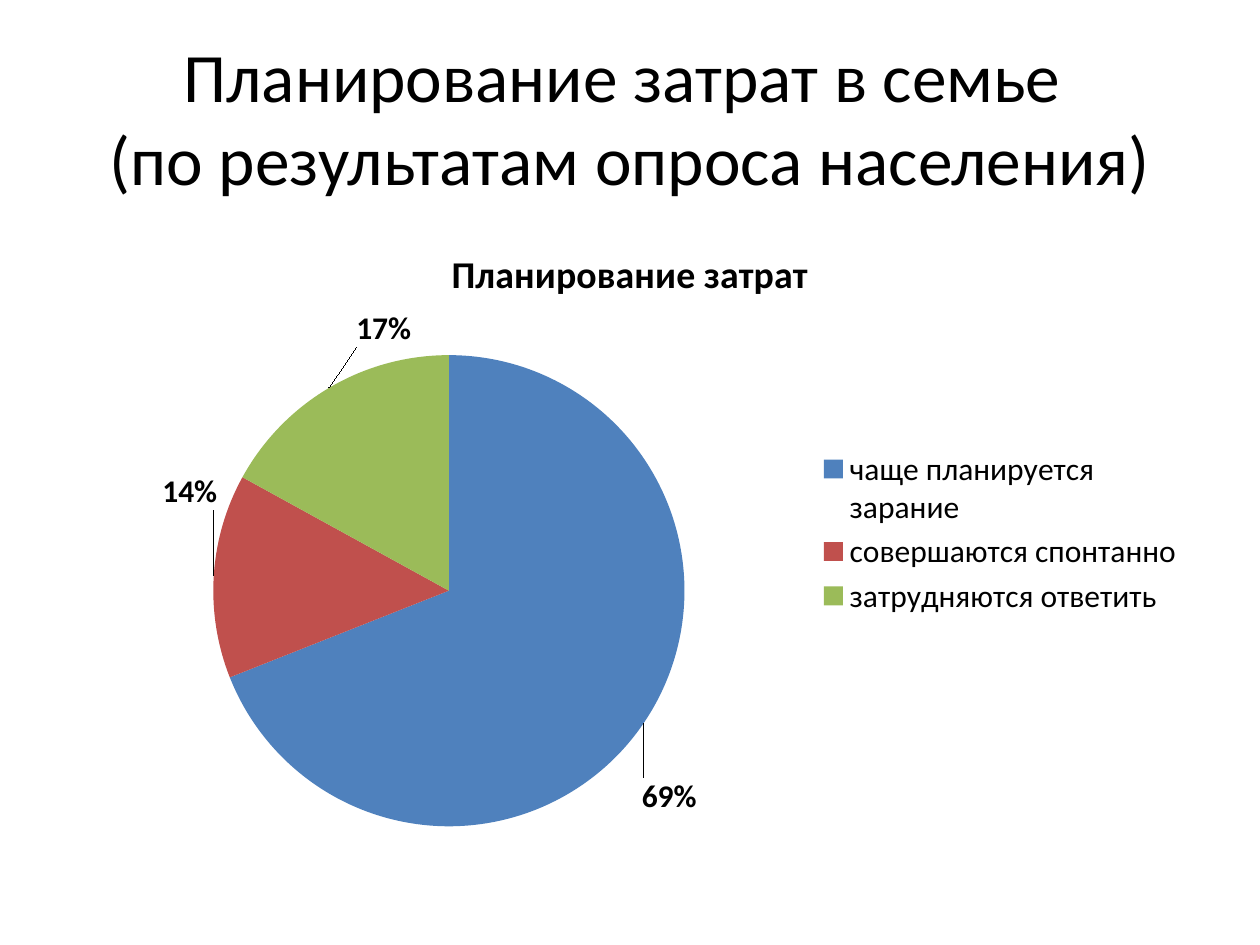
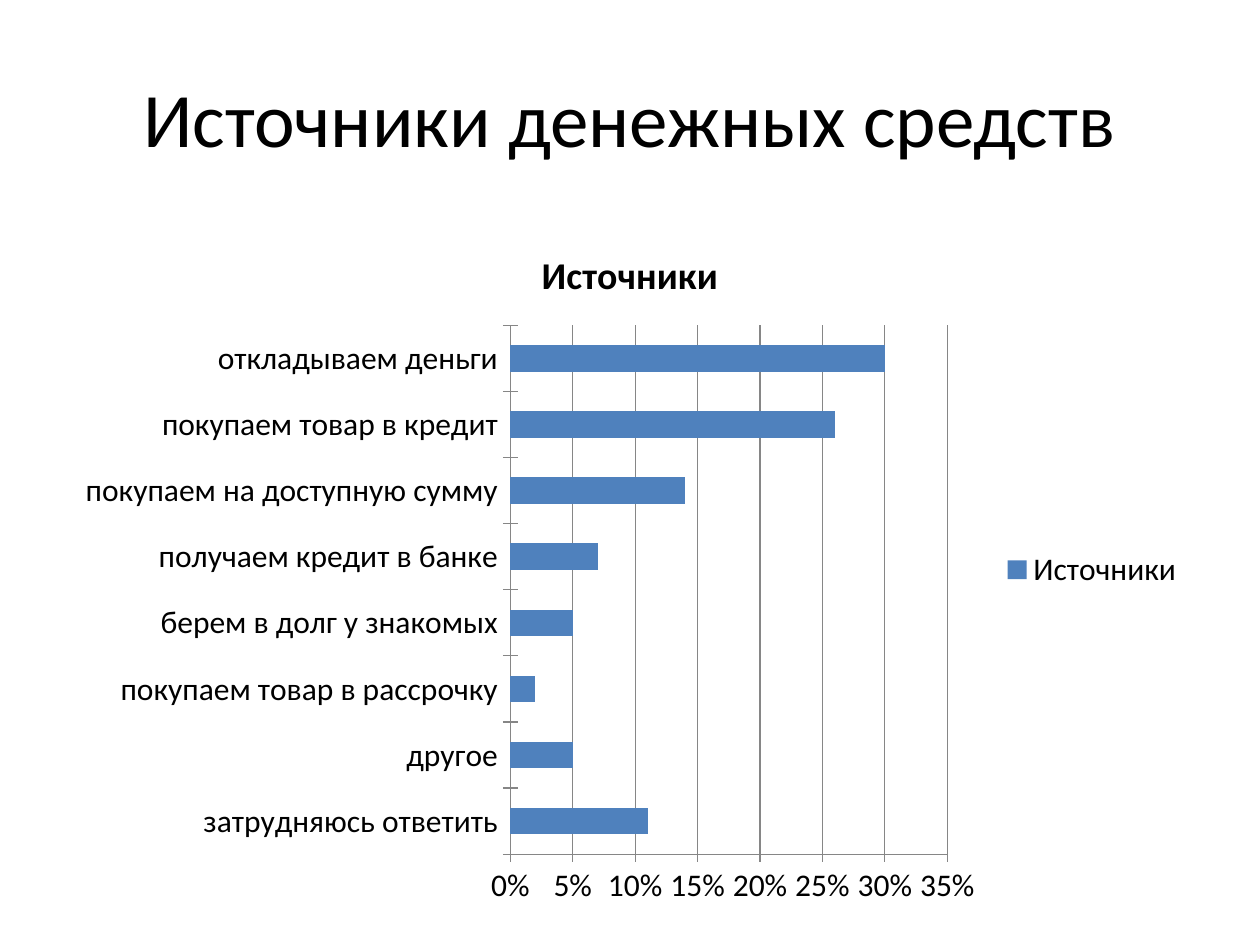
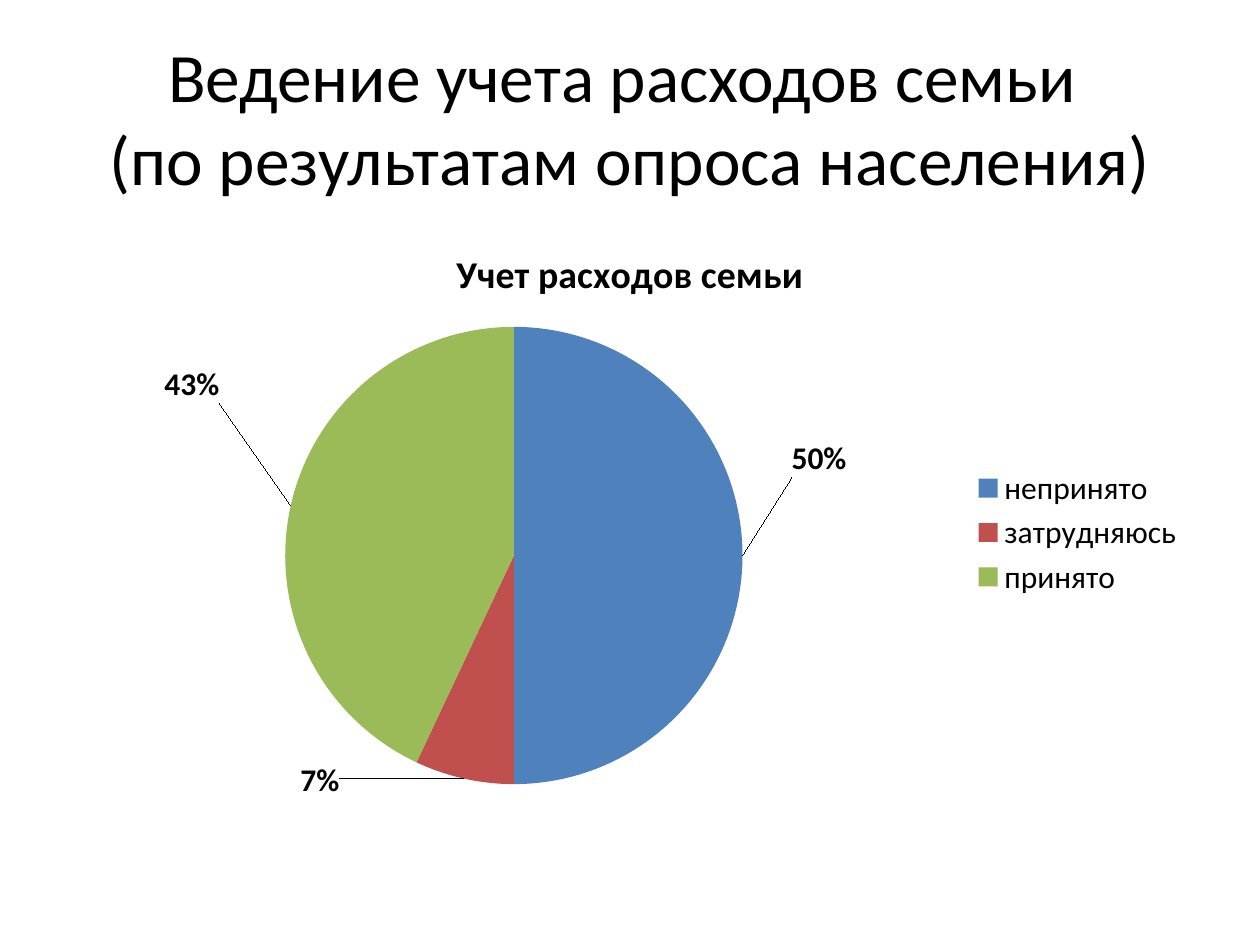
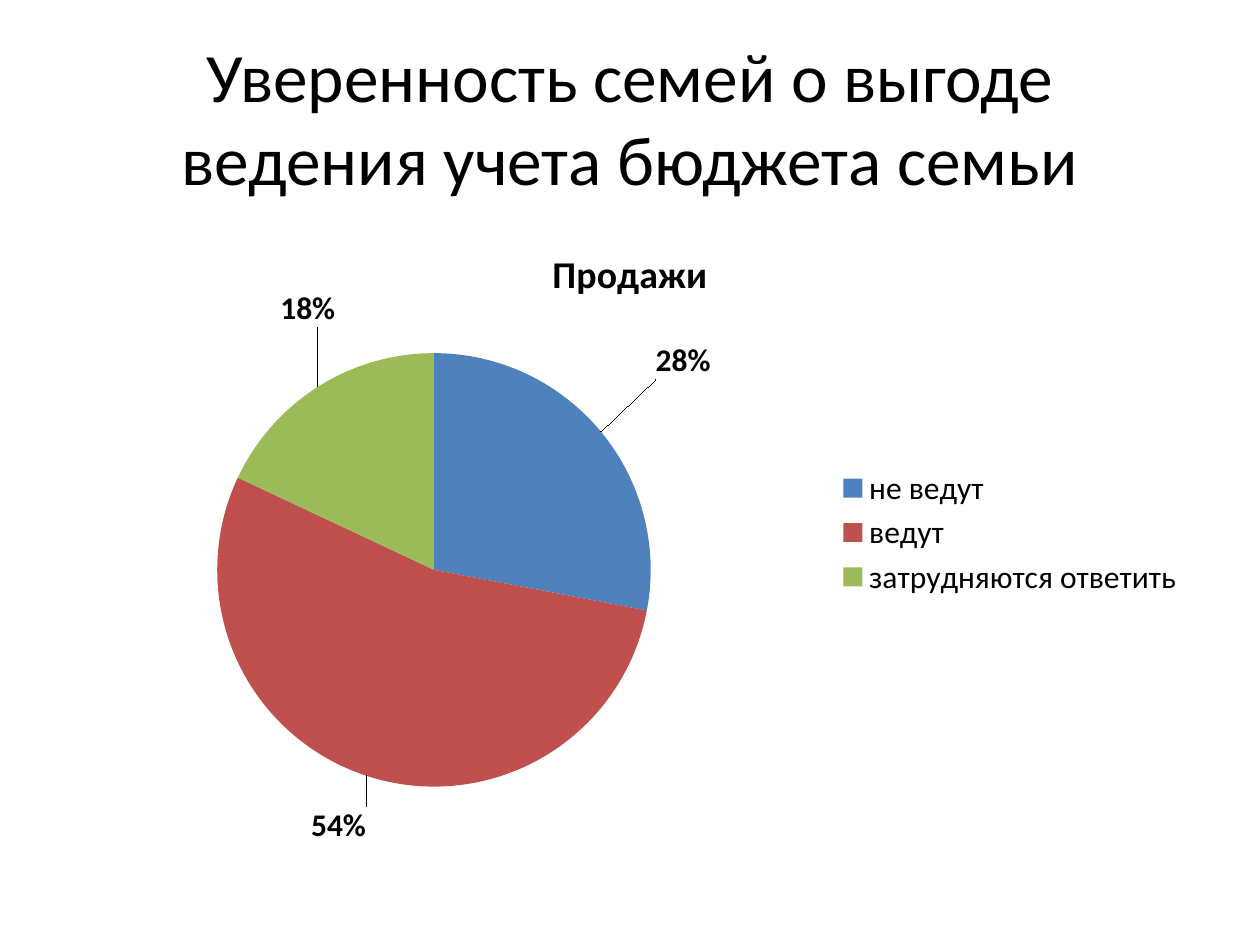
import math
from dataclasses import dataclass

import pptx
import pptx.chart.data
import pptx.dml.color
import pptx.enum.chart
import pptx.enum.text
import pptx.oxml
import pptx.oxml.ns
import pptx.util

Cm = pptx.util.Cm
RGB = pptx.dml.color.RGBColor.from_string
CHART_TYPE = pptx.enum.chart.XL_CHART_TYPE


@dataclass(frozen=True)
class Theme:
    font: str = "Calibri"
    ink: str = "000000"
    grid: str = "868686"
    slices: tuple = ("4F81BD", "C0504D", "9BBB59")
    title_size: float = 39.6
    short_title_size: float = 44
    chart_title_size: float = 21.6
    chart_size: float = 18


MARGIN = 1.27
TITLE_TOP, TITLE_HEIGHT = 0.76, 3.18
CHART_TOP, CHART_WIDTH = 4.45, 22.86
PIE_HEIGHT, BAR_HEIGHT = 12.57, 14.07
LABEL_WIDTH, LABEL_HEIGHT, LABEL_GAP = 1.1, 0.75, 0.15

PLANNING = {
    "title": ["Планирование затрат в семье ", "(по результатам опроса населения)"],
    "name": "Планирование затрат",
    "values": {
        "чаще планируется зарание": 0.69,
        "совершаются спонтанно": 0.14,
        "затрудняются ответить": 0.17,
    },
    "center": (9.05, 11.91),
    "radius": 4.75,
    "label_centers": [(13.49, 16.05), (3.83, 9.9), (7.74, 6.63)],
}
SOURCES = {
    "title": ["Источники денежных средств"],
    "name": "Источники",
    "values": {
        "затрудняюсь ответить": 0.11,
        "другое": 0.05,
        "покупаем товар в рассрочку": 0.02,
        "берем в долг у знакомых": 0.05,
        "получаем кредит в банке": 0.07,
        "покупаем на доступную сумму": 0.14,
        "покупаем товар в кредит": 0.26,
        "откладываем деньги": 0.3,
    },
}
ACCOUNTING = {
    "title": ["Ведение учета расходов семьи ", "(по результатам опроса населения)"],
    "name": "Учет расходов семьи",
    "values": {"непринято": 0.5, "затрудняюсь": 0.07, "принято": 0.43},
    "center": (10.36, 11.2),
    "radius": 4.61,
    "label_centers": [(16.51, 9.25), (6.29, 15.72), (3.87, 7.76)],
}
CONFIDENCE = {
    "title": ["Уверенность семей о выгоде ведения учета бюджета семьи"],
    "name": "Продажи",
    "values": {"не ведут": 0.28, "ведут": 0.54, "затрудняются ответить": 0.18},
    "center": (8.75, 11.49),
    "radius": 4.37,
    "label_centers": [(13.77, 7.28), (6.83, 16.63), (6.21, 6.23)],
}


def apply(target, formats):
    for name, value in formats.items():
        setattr(target, name, value)


def manual_layout(**settings):
    parts = "".join(f'<c:{name} val="{value}"/>' for name, value in settings.items())
    namespace = pptx.oxml.ns.nsdecls("c")
    return pptx.oxml.parse_xml(
        f"<c:layout {namespace}><c:manualLayout>{parts}</c:manualLayout></c:layout>"
    )


class Deck:
    def __init__(self, theme):
        self.theme = theme
        self.show = pptx.Presentation()
        apply(self.show, {"slide_width": Cm(25.4), "slide_height": Cm(19.05)})
        self.page = None

    def format_font(self, font, size, bold=False):
        apply(font, {"name": self.theme.font, "size": pptx.util.Pt(size), "bold": bold})
        font.color.rgb = RGB(self.theme.ink)

    def add_page(self, lines, size):
        self.page = self.show.slides.add_slide(self.show.slide_layouts[5])
        box = self.page.shapes.title
        apply(box, {
            "left": Cm(MARGIN),
            "top": Cm(TITLE_TOP),
            "width": Cm(CHART_WIDTH),
            "height": Cm(TITLE_HEIGHT),
        })
        apply(box.text_frame, {
            "word_wrap": True,
            "auto_size": pptx.enum.text.MSO_AUTO_SIZE.NONE,
            "vertical_anchor": pptx.enum.text.MSO_ANCHOR.MIDDLE,
        })
        para = box.text_frame.paragraphs[0]
        para.alignment = pptx.enum.text.PP_ALIGN.CENTER
        for index, line in enumerate(lines):
            if index:
                para.add_line_break()
            span = para.add_run()
            span.text = line
            self.format_font(span.font, size)

    def add_chart(self, kind, name, values, height):
        data = pptx.chart.data.CategoryChartData(number_format="0%")
        data.categories = list(values)
        data.add_series(name, list(values.values()))
        chart = self.page.shapes.add_chart(
            kind, Cm(MARGIN), Cm(CHART_TOP), Cm(CHART_WIDTH), Cm(height), data
        ).chart
        self.format_font(chart.font, self.theme.chart_size)
        chart.has_title = True
        chart.chart_title.text_frame.text = name
        span = chart.chart_title.text_frame.paragraphs[0].runs[0]
        self.format_font(span.font, self.theme.chart_title_size, bold=True)
        chart.has_legend = True
        apply(chart.legend, {
            "position": pptx.enum.chart.XL_LEGEND_POSITION.RIGHT,
            "include_in_layout": False,
        })
        self.format_font(chart.legend.font, self.theme.chart_size)
        return chart

    def paint(self, target, color):
        target.format.fill.solid()
        target.format.fill.fore_color.rgb = RGB(color)

    def add_pie(self, name, values, center, radius, label_centers):
        chart = self.add_chart(CHART_TYPE.PIE, name, values, PIE_HEIGHT)
        plot = chart.plots[0]
        plot.vary_by_categories = True
        self.place_pie(chart, center, radius)
        series = plot.series[0]
        labels = series.data_labels
        apply(labels, {
            "show_value": True,
            "number_format": "0%",
            "number_format_is_linked": False,
        })
        self.format_font(labels.font, self.theme.chart_size, bold=True)
        turned = 0
        for index, share in enumerate(values.values()):
            point = series.points[index]
            self.paint(point, self.theme.slices[index])
            point.data_label.position = pptx.enum.chart.XL_LABEL_POSITION.OUTSIDE_END
            self.format_font(point.data_label.font, self.theme.chart_size, bold=True)
            angle = 2 * math.pi * (turned + share / 2)
            turned += share
            self.move_label(labels, index, angle, center, radius, label_centers[index])

    def place_pie(self, chart, center, radius):
        area = chart.plots[0]._element.getparent()
        for old in area.findall(pptx.oxml.ns.qn("c:layout")):
            area.remove(old)
        area.insert(0, manual_layout(
            layoutTarget="inner",
            xMode="edge",
            yMode="edge",
            x=(center[0] - radius - MARGIN) / CHART_WIDTH,
            y=(center[1] - radius - CHART_TOP) / PIE_HEIGHT,
            w=2 * radius / CHART_WIDTH,
            h=2 * radius / PIE_HEIGHT,
        ))

    def move_label(self, labels, index, angle, center, radius, target):
        across, down = math.sin(angle), -math.cos(angle)
        reach = radius + LABEL_GAP
        side = 0 if abs(down) > 0.99 else math.copysign(LABEL_WIDTH / 2, across)
        drop = 0 if abs(across) > 0.99 else math.copysign(LABEL_HEIGHT / 2, down)
        label = labels._element.findall(pptx.oxml.ns.qn("c:dLbl"))[index]
        label.insert(1, manual_layout(
            x=(target[0] - center[0] - reach * across - side) / CHART_WIDTH,
            y=(target[1] - center[1] - reach * down - drop) / PIE_HEIGHT,
        ))

    def add_bars(self, name, values):
        chart = self.add_chart(CHART_TYPE.BAR_CLUSTERED, name, values, BAR_HEIGHT)
        plot = chart.plots[0]
        apply(plot, {"gap_width": 150, "vary_by_categories": False})
        self.paint(plot.series[0], self.theme.slices[0])
        for axis in (chart.category_axis, chart.value_axis):
            axis.major_tick_mark = pptx.enum.chart.XL_TICK_MARK.CROSS
            axis.format.line.color.rgb = RGB(self.theme.grid)
            self.format_font(axis.tick_labels.font, self.theme.chart_size)
        apply(chart.value_axis, {
            "minimum_scale": 0,
            "maximum_scale": 0.35,
            "major_unit": 0.05,
            "has_major_gridlines": True,
        })
        chart.value_axis.major_gridlines.format.line.color.rgb = RGB(self.theme.grid)
        apply(chart.value_axis.tick_labels, {
            "number_format": "0%",
            "number_format_is_linked": False,
        })


def main():
    theme = Theme()
    deck = Deck(theme)
    for survey in (PLANNING, SOURCES, ACCOUNTING, CONFIDENCE):
        content = dict(survey)
        lines = content.pop("title")
        if "radius" in content:
            deck.add_page(lines, theme.title_size)
            deck.add_pie(**content)
        else:
            deck.add_page(lines, theme.short_title_size)
            deck.add_bars(**content)
    deck.show.save("out.pptx")


if __name__ == "__main__":
    main()
